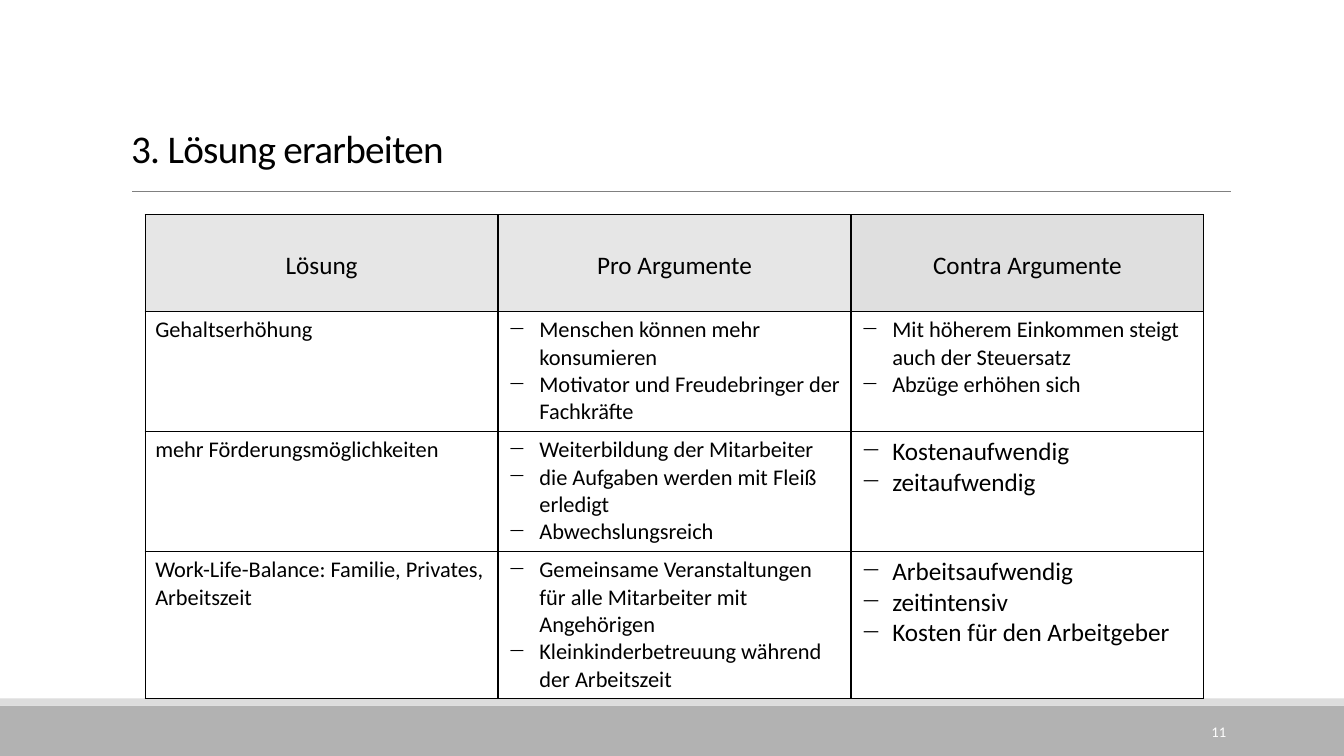
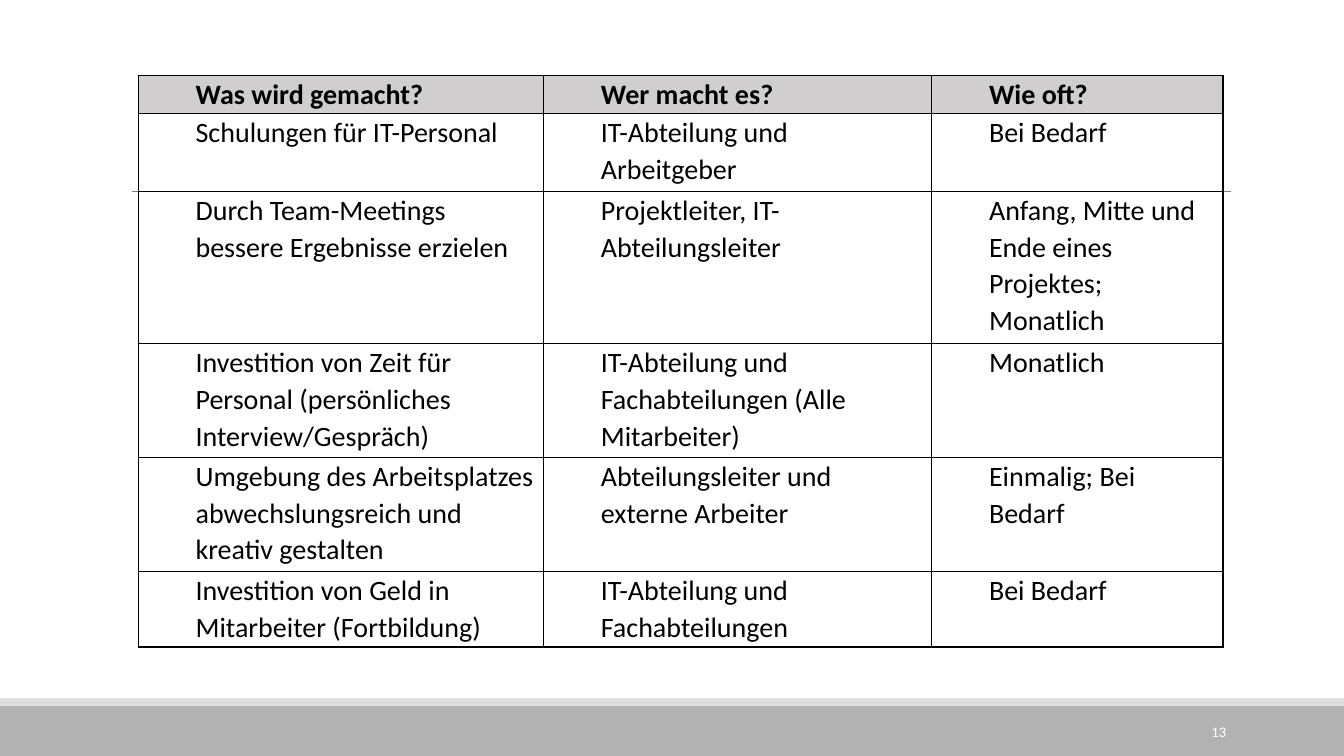
from lxml import etree
from pptx import Presentation
from pptx.dml.color import RGBColor
from pptx.enum import shapes, text
from pptx.oxml import ns
from pptx.util import Inches, Pt

# Shared look
FONT = "Calibri"
BLACK, WHITE = "000000", "FFFFFF"
BAND, BAND_EDGE, RULE = "B2B2B2", "DDDDDD", "808080"
SLIDE_WIDTH, SLIDE_HEIGHT = 13.33, 7.5
BULLET_INDENT = 0.31

# Table contents: a list in a cell is shown with bullets
SOLUTION_HEADS = ["Lösung", "Pro Argumente", "Contra Argumente"]
SOLUTIONS = [
    ["Gehaltserhöhung",
     ["Menschen können mehr konsumieren", "Motivator und Freudebringer der Fachkräfte"],
     ["Mit höherem Einkommen steigt auch der Steuersatz", "Abzüge erhöhen sich"]],
    ["mehr Förderungsmöglichkeiten",
     ["Weiterbildung der Mitarbeiter", "die Aufgaben werden mit Fleiß erledigt",
      "Abwechslungsreich"],
     ["Kostenaufwendig", "zeitaufwendig"]],
    ["Work-Life-Balance: Familie, Privates, Arbeitszeit",
     ["Gemeinsame Veranstaltungen für alle Mitarbeiter mit Angehörigen",
      "Kleinkinderbetreuung während der Arbeitszeit"],
     ["Arbeitsaufwendig", "zeitintensiv", "Kosten für den Arbeitgeber"]],
]
MEASURES = [
    ["Was wird gemacht?", "Wer macht es?", "Wie oft?"],
    ["Schulungen für IT-Personal", "IT-Abteilung und Arbeitgeber", "Bei Bedarf"],
    ["Durch Team-Meetings bessere Ergebnisse erzielen",
     "Projektleiter, IT-Abteilungsleiter",
     "Anfang, Mitte und Ende eines Projektes; Monatlich"],
    ["Investition von Zeit für Personal (persönliches Interview/Gespräch)",
     "IT-Abteilung und Fachabteilungen (Alle Mitarbeiter)", "Monatlich"],
    ["Umgebung des Arbeitsplatzes abwechslungsreich und kreativ gestalten",
     "Abteilungsleiter und externe Arbeiter", "Einmalig; Bei Bedarf"],
    ["Investition von Geld in Mitarbeiter (Fortbildung)",
     "IT-Abteilung und Fachabteilungen", "Bei Bedarf"],
]


def color(hex_string):
    return RGBColor.from_string(hex_string)


def add_run(paragraph, words, size, hex_string=BLACK, bold=False):
    run = paragraph.add_run()
    run.text = words
    run.font.name, run.font.size, run.font.bold = FONT, Pt(size), bold
    run.font.color.rgb = color(hex_string)
    return run


# Parts of every slide
def add_band(slide, top, height, fill):
    band = slide.shapes.add_shape(shapes.MSO_SHAPE.RECTANGLE, 0, Inches(top),
                                  Inches(SLIDE_WIDTH), Inches(height))
    band.shadow.inherit = False
    band.fill.solid()
    band.fill.fore_color.rgb = color(fill)
    band.line.fill.background()


def add_frame(slide, number):
    add_band(slide, 7, 0.5, BAND)
    add_band(slide, 6.93, 0.07, BAND_EDGE)

    rule = slide.shapes.add_connector(shapes.MSO_CONNECTOR.STRAIGHT, Inches(1.31),
                                      Inches(1.9), Inches(12.21), Inches(1.9))
    rule.line.color.rgb = color(RULE)
    rule.line.width = Pt(0.5)
    etree.SubElement(rule._element.spPr, ns.qn("a:effectLst"))

    box = slide.shapes.add_textbox(Inches(10.83), Inches(7.06), Inches(1.43), Inches(0.4))
    box.text_frame.word_wrap = True
    box.text_frame.vertical_anchor = text.MSO_ANCHOR.MIDDLE
    paragraph = box.text_frame.paragraphs[0]
    paragraph.alignment = text.PP_ALIGN.RIGHT
    add_run(paragraph, str(number), 10.5, WHITE)


def set_title(slide, words):
    title = slide.shapes.title
    title.left, title.top = Inches(1.2), Inches(1.07)
    title.width, title.height = Inches(11), Inches(0.68)
    frame = title.text_frame
    frame.auto_size = text.MSO_AUTO_SIZE.NONE
    frame.vertical_anchor = text.MSO_ANCHOR.BOTTOM
    paragraph = frame.paragraphs[0]
    paragraph.alignment = text.PP_ALIGN.LEFT
    paragraph.line_spacing = 0.85
    run = add_run(paragraph, words, 28)
    run.font._element.set("spc", "-50")


# Tables
def add_grid(slide, left, top, widths, heights):
    table = slide.shapes.add_table(len(heights), len(widths), Inches(left), Inches(top),
                                   Inches(sum(widths)), Inches(sum(heights))).table
    table.first_row = table.horz_banding = False
    for column, width in zip(table.columns, widths):
        column.width = Inches(width)
    for row, height in zip(table.rows, heights):
        row.height = Inches(height)
    return table


def style_cell(cell, fill=None):
    properties = cell._tc.get_or_add_tcPr()
    for side in ("a:lnL", "a:lnR", "a:lnT", "a:lnB"):
        line = etree.SubElement(properties, ns.qn(side), w=str(Pt(1)))
        solid = etree.SubElement(line, ns.qn("a:solidFill"))
        etree.SubElement(solid, ns.qn("a:srgbClr"), val=BLACK)
    if fill:
        cell.fill.solid()
        cell.fill.fore_color.rgb = color(fill)
    else:
        cell.fill.background()


def indent(paragraph, margin, bullet=None):
    properties = paragraph._p.get_or_add_pPr()
    properties.set("marL", str(Inches(margin)))
    if bullet:
        properties.set("indent", str(-Inches(margin)))
        etree.SubElement(properties, ns.qn("a:buChar"), char=bullet)


def fill_list(cell, items, size):
    frame = cell.text_frame
    for index, item in enumerate(items):
        paragraph = frame.add_paragraph() if index else frame.paragraphs[0]
        indent(paragraph, BULLET_INDENT, "−")
        add_run(paragraph, item, size)


def add_solution_table(slide):
    table = add_grid(slide, 1.44, 2.13, [3.5] * 3, [0.96, 1.19, 1.19, 1.46])
    for column, (head, fill) in enumerate(zip(SOLUTION_HEADS, ["E6E6E6", "E6E6E6", "DFDFDF"])):
        cell = table.cell(0, column)
        style_cell(cell, fill)
        paragraph = cell.text_frame.paragraphs[0]
        paragraph.alignment = text.PP_ALIGN.CENTER
        paragraph.line_spacing = 2.0
        add_run(paragraph, head, 18)
    for row, (solution, *arguments) in enumerate(SOLUTIONS, 1):
        cell = table.cell(row, 0)
        style_cell(cell)
        add_run(cell.text_frame.paragraphs[0], solution, 16)
        for column, items in enumerate(arguments, 1):
            cell = table.cell(row, column)
            style_cell(cell)
            fill_list(cell, items, 18 if column == 2 and row > 1 else 16)


def add_measure_table(slide):
    table = add_grid(slide, 1.37, 0.75, [4.02, 3.85, 2.89],
                     [0.38, 0.77, 1.51, 1.13, 1.13, 0.75])
    for row, entries in enumerate(MEASURES):
        for column, words in enumerate(entries):
            cell = table.cell(row, column)
            style_cell(cell, None if row else "D0CECE")
            cell.margin_left = cell.margin_right = Inches(0.07)
            cell.margin_top = cell.margin_bottom = 0
            paragraph = cell.text_frame.paragraphs[0]
            indent(paragraph, 0.5)
            paragraph.line_spacing = 1.07
            add_run(paragraph, words, 20, bold=row == 0)


def main():
    presentation = Presentation()
    presentation.slide_width = Inches(SLIDE_WIDTH)
    presentation.slide_height = Inches(SLIDE_HEIGHT)
    title_only, blank = presentation.slide_layouts[5], presentation.slide_layouts[6]

    # Solutions with arguments
    slide = presentation.slides.add_slide(title_only)
    add_frame(slide, 11)
    set_title(slide, "3. Lösung erarbeiten")
    add_solution_table(slide)

    # Measures, people and frequency
    slide = presentation.slides.add_slide(blank)
    add_frame(slide, 13)
    add_measure_table(slide)

    presentation.save("out.pptx")


if __name__ == "__main__":
    main()
